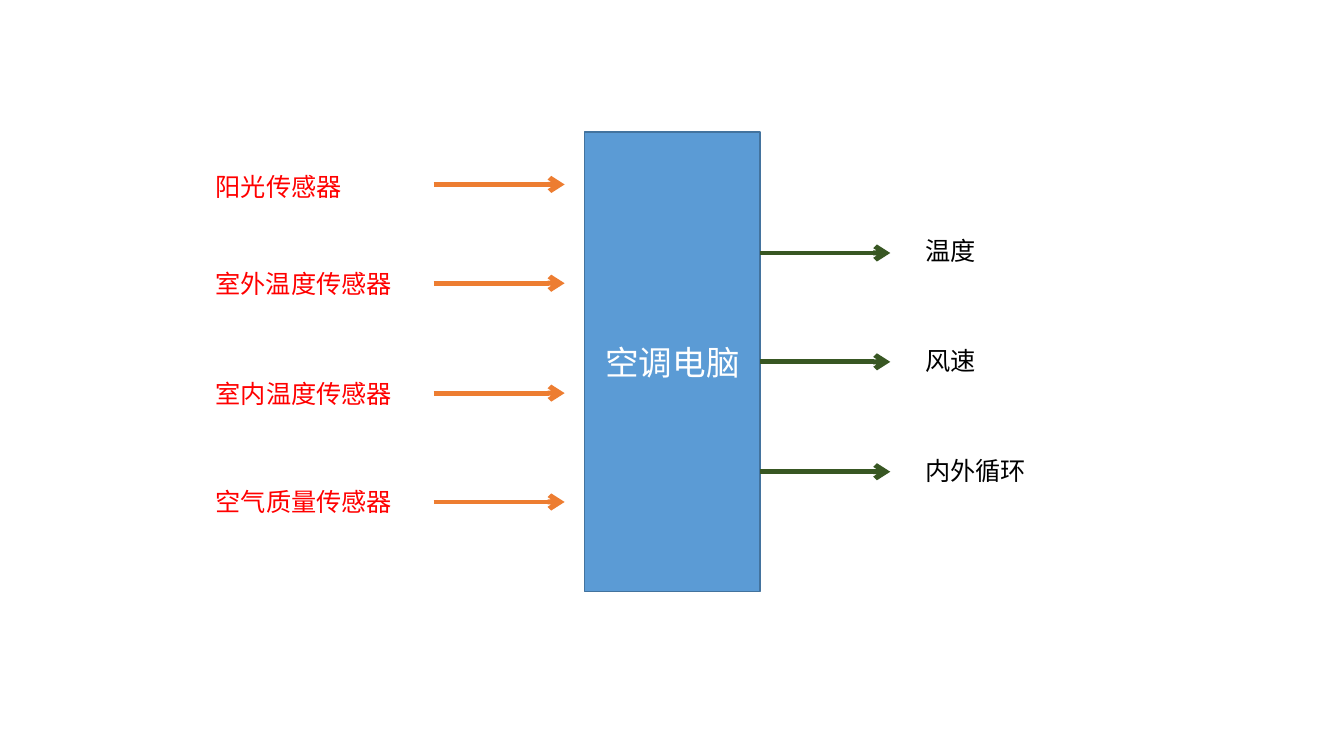
"""Draw the air conditioner computer with its sensor inputs and control outputs."""
from lxml import etree
from pptx import Presentation
from pptx.dml.color import RGBColor
from pptx.enum.shapes import MSO_CONNECTOR, MSO_SHAPE
from pptx.enum.text import MSO_ANCHOR, PP_ALIGN
from pptx.oxml.ns import qn
from pptx.util import Pt

PX = 9144
RECT = MSO_SHAPE.RECTANGLE
LINE = MSO_CONNECTOR.STRAIGHT
MIDDLE = MSO_ANCHOR.MIDDLE
CENTER = PP_ALIGN.CENTER
RIGHT = 3
FONT = "Calibri"
COLORS = {
    "box": "5B9BD5", "edge": "43739E", "white": "FFFFFF", "black": "000000",
    "red": "FF0000", "orange": "ED7D31", "green": "385723",
}
INPUTS = [
    ("阳光传感器", 165, 148, 36, 183),
    ("室外温度传感器", 261, 207, 39, 281),
    ("室内温度传感器", 370, 199, 37, 390),
    ("空气质量传感器", 478, 199, 38, 498),
]
OUTPUTS = [
    ("温度", 229, 94, 33, 251),
    ("风速", 338, 94, 33, 359),
    ("内外循环", 447, 136, 38, 468),
]


class Canvas:
    """Hold the slide and draw styled elements on it."""

    def __init__(self, slide):
        self.shapes = slide.shapes

    def color(self, name):
        return RGBColor.from_string(COLORS[name])

    def fill_text(self, shape, text, size, color):
        para = shape.text_frame.paragraphs[0]
        para.text = text
        para.font.name = FONT
        para.font.size = Pt(size)
        para.font.color.rgb = self.color(color)
        return para

    def label(self, text, x, y, w, h, color):
        box = self.shapes.add_textbox(x * PX, y * PX, w * PX, h * PX)
        box.text_frame.word_wrap = True
        self.fill_text(box, text, 18, color)

    def block(self, text, x, y, w, h):
        box = self.shapes.add_shape(RECT, x * PX, y * PX, w * PX, h * PX)
        box.shadow.inherit = False
        box.fill.solid()
        box.fill.fore_color.rgb = self.color("box")
        box.line.color.rgb = self.color("edge")
        box.line.width = Pt(1)
        box.text_frame.word_wrap = True
        box.text_frame.vertical_anchor = MIDDLE
        self.fill_text(box, text, 24, "white").alignment = CENTER
        return box

    def arrow(self, x, y, end, color):
        line = self.shapes.add_connector(LINE, x * PX, y * PX, end * PX, y * PX)
        line.line.color.rgb = self.color(color)
        line.line.width = Pt(3.5)
        props = line._element.spPr
        etree.SubElement(props.find(qn("a:ln")), qn("a:tailEnd"), type="arrow")
        etree.SubElement(props, qn("a:effectLst"))
        return line


def main():
    deck = Presentation()
    deck.slide_width = 1333 * PX
    deck.slide_height = 750 * PX
    canvas = Canvas(deck.slides.add_slide(deck.slide_layouts[6]))

    unit = canvas.block("空调电脑", 580, 131, 174, 456)
    for text, top, w, h, y in INPUTS:
        canvas.label(text, 204, top, w, h, "red")
        canvas.arrow(430, y, 560, "orange")
    for text, top, w, h, y in OUTPUTS:
        canvas.label(text, 908, top, w, h, "black")
        line = canvas.arrow(754, y, 883, "green")
        if y * PX == unit.top + unit.height // 2:
            line.begin_connect(unit, RIGHT)

    deck.save("out.pptx")


if __name__ == "__main__":
    main()
